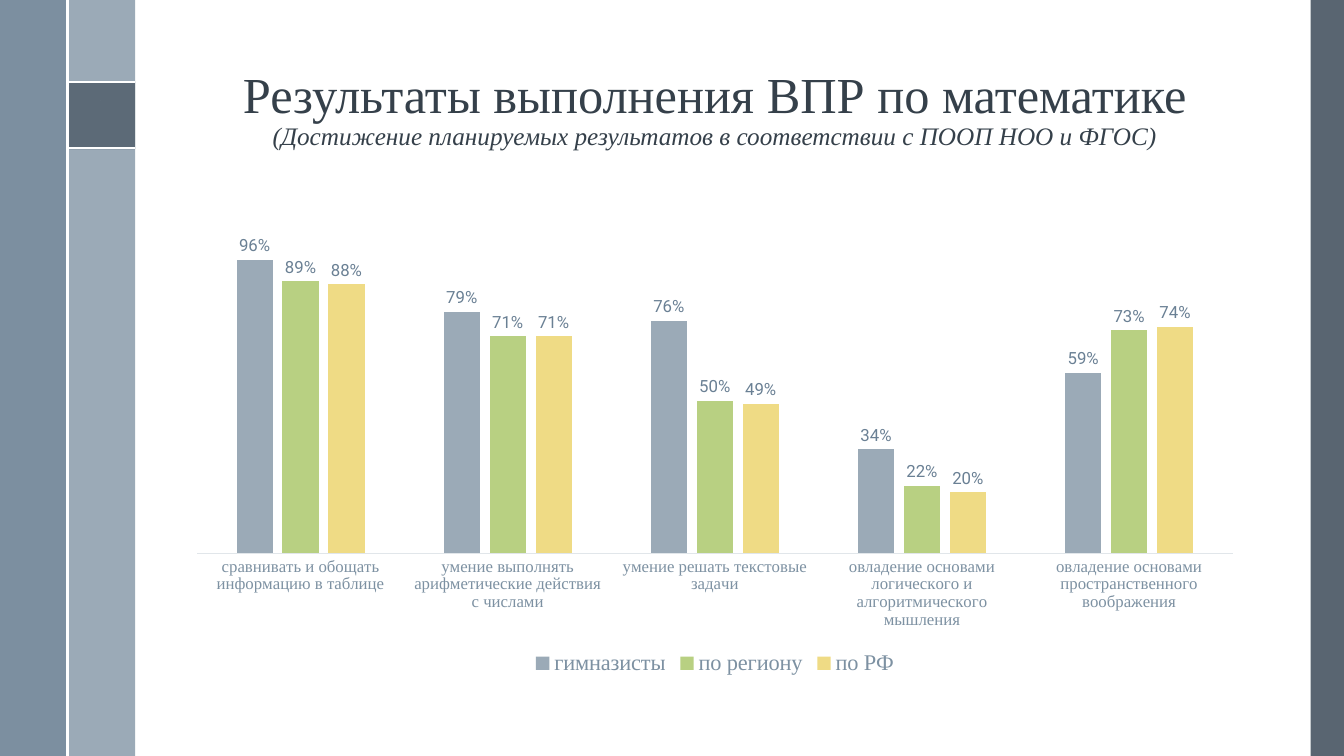
"""Build a slide with a clustered column chart of mathematics test results."""
import pptx
import pptx.chart.data
import pptx.dml.color
import pptx.enum.chart
import pptx.enum.shapes
import pptx.enum.text
import pptx.oxml.ns
import pptx.oxml.xmlchemy
import pptx.util
from pptx.util import Inches

COLOURS = {
    "white": "FFFFFF", "slate": "475562", "steel": "6A8093", "mist": "9BAAB7",
    "title": "35404A", "chart": "465562", "axis": "7D91A2", "axis_line": "E1E6EA",
    "label": "6A8094", "green": "B8D082", "yellow": "EFDB85",
}
SERIF = "Times New Roman"
SANS = "Roboto"
BANDS = [
    (13, 0, 0.33, 7.5, "slate", 90),
    (0.67, 0, 0.67, 7.5, "mist", 100),
    (0, 0, 0.67, 7.5, "steel", 88),
    (0.67, 0.81, 0.67, 0.67, "slate", 75),
]
RULES = [(0.67, 0.81, 1.34, 0.81), (0.67, 1.47, 1.34, 1.47), (0.67, 0, 0.67, 7.5)]
PI_START = (1.18, 0.98)
PI_CURVES = [
    [(0.9, 0.98)],
    [(0.85, 0.98), (0.83, 1.03), (0.83, 1.04)],
    [(0.83, 1.04), (0.83, 1.05), (0.84, 1.05)],
    [(0.85, 1.05)],
    [(0.85, 1.05), (0.87, 1.01), (0.9, 1.01)],
    [(0.94, 1.01)],
    [(0.94, 1.05), (0.93, 1.22), (0.88, 1.27)],
    [(0.87, 1.28), (0.87, 1.28), (0.88, 1.29)],
    [(0.9, 1.29)],
    [(0.95, 1.23), (0.96, 1.05), (0.97, 1.01)],
    [(1.06, 1.01)],
    [(1.05, 1.22)],
    [(1.05, 1.22), (1.04, 1.26), (1.07, 1.29)],
    [(1.08, 1.3), (1.09, 1.3), (1.1, 1.3)],
    [(1.11, 1.3), (1.11, 1.3), (1.12, 1.3)],
    [(1.17, 1.3), (1.19, 1.23), (1.19, 1.22)],
    [(1.19, 1.22), (1.18, 1.21), (1.18, 1.21)],
    [(1.17, 1.21), (1.16, 1.21), (1.16, 1.22)],
    [(1.16, 1.22), (1.15, 1.27), (1.11, 1.28)],
    [(1.1, 1.28), (1.09, 1.28), (1.08, 1.27)],
    [(1.07, 1.26), (1.07, 1.23), (1.07, 1.22)],
    [(1.09, 1.01)],
    [(1.18, 1.01)],
    [(1.19, 1.01), (1.19, 1), (1.19, 1)],
    [(1.19, 0.99), (1.19, 0.98), (1.18, 0.98)],
]
CATEGORIES = [
    "сравнивать и обощать информацию в таблице",
    "умение выполнять арифметические действия с числами",
    "умение решать текстовые задачи",
    "овладение основами логического и алгоритмического мышления",
    "овладение основами пространственного воображения",
]
SERIES = [
    ("гимназисты", "mist", [0.96, 0.79, 0.76, 0.34, 0.59]),
    ("по региону", "green", [0.89, 0.71, 0.5, 0.22, 0.73]),
    ("по РФ", "yellow", [0.88, 0.71, 0.49, 0.2, 0.74]),
]


def colour(name):
    """Return the named colour."""
    return pptx.dml.color.RGBColor.from_string(COLOURS[name])


def style_font(font, face, size, name):
    """Set typeface, size and colour of a font."""
    font.name = face
    font.size = pptx.util.Pt(size)
    font.color.rgb = colour(name)


def fill_shape(shape, name, opacity=100):
    """Give a shape a flat fill, without outline or shadow."""
    shape.shadow.inherit = False
    shape.line.fill.background()
    shape.fill.solid()
    shape.fill.fore_color.rgb = colour(name)
    if opacity < 100:
        tint = shape._element.spPr.find(".//" + pptx.oxml.ns.qn("a:srgbClr"))
        alpha = pptx.oxml.xmlchemy.OxmlElement("a:alpha")
        alpha.set("val", str(opacity * 1000))
        tint.append(alpha)


def add_band(page, left, top, width, height, name, opacity):
    """Add a coloured rectangle."""
    band = page.shapes.add_shape(
        pptx.enum.shapes.MSO_SHAPE.RECTANGLE,
        Inches(left), Inches(top), Inches(width), Inches(height))
    fill_shape(band, name, opacity)


def add_rule(page, *ends):
    """Add a thin white line."""
    rule = page.shapes.add_connector(
        pptx.enum.shapes.MSO_CONNECTOR.STRAIGHT, *map(Inches, ends))
    rule.line.color.rgb = colour("white")
    rule.line.width = pptx.util.Pt(1.5)
    rule._element.spPr.append(pptx.oxml.xmlchemy.OxmlElement("a:effectLst"))


def curve_points(start, first, second, end, steps=6):
    """Return points along a cubic curve."""
    points = []
    for step in range(1, steps + 1):
        t = step / steps
        weights = ((1 - t) ** 3, 3 * t * (1 - t) ** 2, 3 * t ** 2 * (1 - t), t ** 3)
        corners = (start, first, second, end)
        points.append(tuple(
            sum(weight * corner[axis] for weight, corner in zip(weights, corners))
            for axis in (0, 1)))
    return points


def add_pi(page):
    """Add the white pi sign."""
    points = [PI_START]
    for curve in PI_CURVES:
        points += curve if len(curve) == 1 else curve_points(points[-1], *curve)
    builder = page.shapes.build_freeform(*PI_START, scale=Inches(1))
    builder.add_line_segments(points[1:], close=True)
    fill_shape(builder.convert_to_shape(), "white")


def add_title(page):
    """Fill and format the title placeholder."""
    box = page.shapes.title
    box.left, box.top, box.width, box.height = map(Inches, (1.74, 0.19, 10.7, 1.36))
    frame = box.text_frame
    frame.word_wrap = True
    frame.auto_size = pptx.enum.text.MSO_AUTO_SIZE.NONE
    frame.vertical_anchor = pptx.enum.text.MSO_ANCHOR.BOTTOM
    para = frame.paragraphs[0]
    para.alignment = pptx.enum.text.PP_ALIGN.CENTER
    para.line_spacing = 0.9
    style_font(para.font, SERIF, 36, "title")
    heading = para.add_run()
    heading.text = "Результаты выполнения ВПР по математике"
    para.add_line_break()
    subtitle = para.add_run()
    subtitle.text = "(Достижение планируемых результатов в соответствии с ПООП НОО и ФГОС)"
    subtitle.font.size = pptx.util.Pt(18)
    subtitle.font.italic = True


def add_results_chart(page):
    """Add the column chart of results."""
    data = pptx.chart.data.CategoryChartData(number_format="0%")
    data.categories = CATEGORIES
    for name, _, values in SERIES:
        data.add_series(name, values)
    chart = page.shapes.add_chart(
        pptx.enum.chart.XL_CHART_TYPE.COLUMN_CLUSTERED,
        Inches(1.74), Inches(1.75), Inches(10.7), Inches(5), data).chart
    chart.has_title = False
    style_font(chart.font, SANS, 10, "chart")
    chart.has_legend = True
    chart.legend.position = pptx.enum.chart.XL_LEGEND_POSITION.BOTTOM
    chart.legend.include_in_layout = False
    style_font(chart.legend.font, SERIF, 16, "axis")

    axis = chart.category_axis
    axis.major_tick_mark = pptx.enum.chart.XL_TICK_MARK.NONE
    axis.format.line.color.rgb = colour("axis_line")
    axis.format.line.width = pptx.util.Pt(0.75)
    style_font(axis.tick_labels.font, SERIF, 12, "axis")
    chart.value_axis.visible = False
    chart.value_axis.has_major_gridlines = False
    chart.value_axis.minimum_scale = 0
    chart.value_axis.maximum_scale = 1.2

    plot = chart.plots[0]
    plot.gap_width = 219
    plot.overlap = -27
    plot.vary_by_categories = False
    for series, (_, name, _) in zip(plot.series, SERIES):
        series.format.fill.solid()
        series.format.fill.fore_color.rgb = colour(name)
        labels = series.data_labels
        labels.show_value = True
        labels.number_format = "0%"
        labels.number_format_is_linked = False
        labels.position = pptx.enum.chart.XL_LABEL_POSITION.OUTSIDE_END
        style_font(labels.font, SANS, 12, "label")


def main():
    """Build and save the deck."""
    deck = pptx.Presentation()
    deck.slide_width, deck.slide_height = Inches(13.33), Inches(7.5)
    page = deck.slides.add_slide(deck.slide_layouts[5])
    for band in BANDS:
        add_band(page, *band)
    for rule in RULES:
        add_rule(page, *rule)
    add_pi(page)
    add_title(page)
    add_results_chart(page)
    deck.save("out.pptx")


if __name__ == "__main__":
    main()
